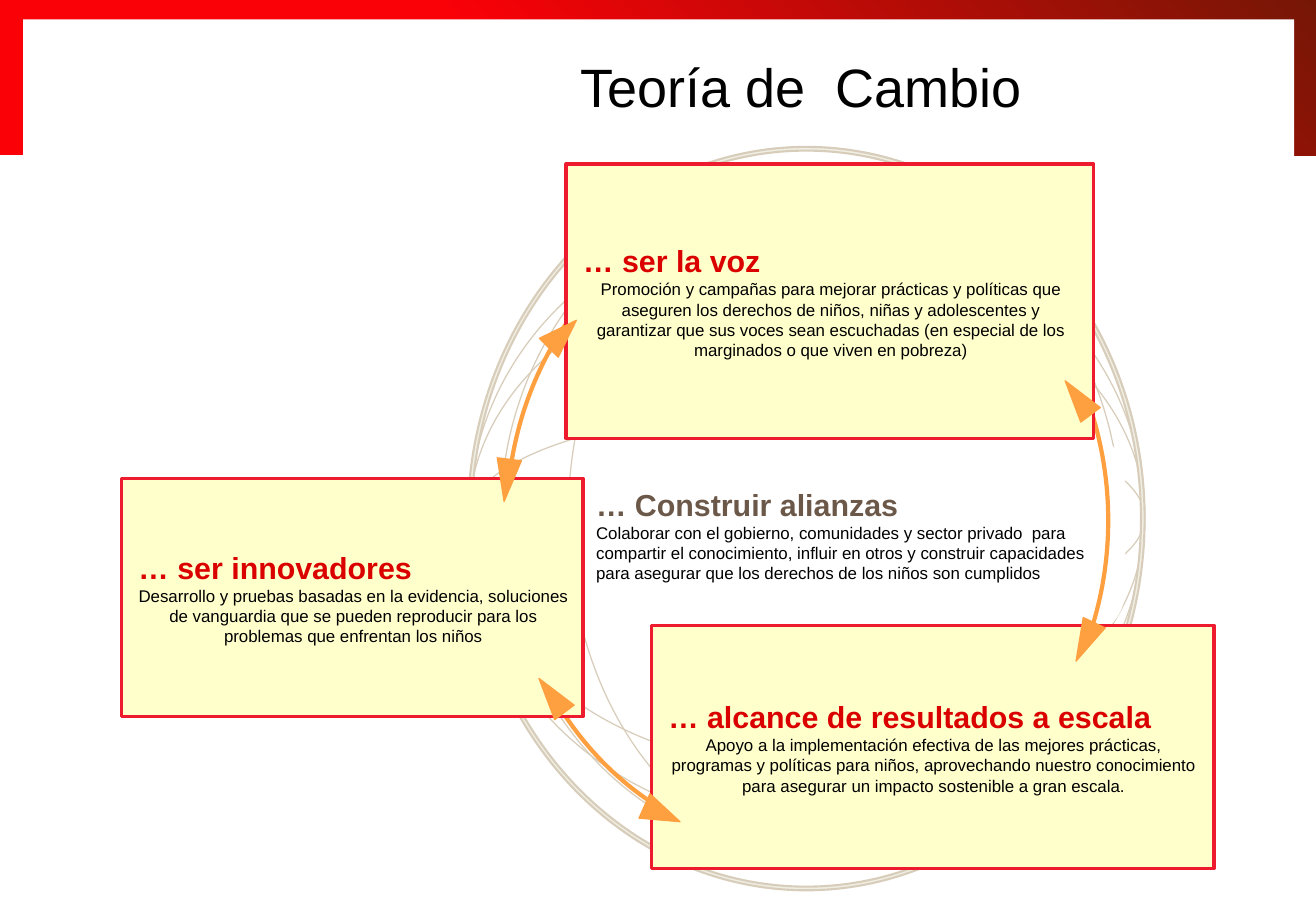
"""Build the theory of change slide with its linked boxes over a globe."""
from dataclasses import dataclass

from pptx import Presentation
from pptx.dml.color import RGBColor
from pptx.enum.shapes import MSO_SHAPE as Preset
from pptx.enum.text import MSO_ANCHOR as Anchor, PP_ALIGN as Align
from pptx.shapes.autoshape import Shape
from pptx.slide import Slide
from pptx.text.text import TextFrame
from pptx.util import Inches, Pt


@dataclass(frozen=True)
class Theme:
    font: str = "Arial"
    title_size: float = 32
    heading_size: float = 18
    body_size: float = 10
    black: str = "000000"
    white: str = "FFFFFF"
    band_start: str = "FA0007"
    band_end: str = "761706"
    globe: str = "D8CDBA"
    ring: str = "F0EFE4"
    orange: str = "FE9F40"
    card_fill: str = "FFFFCC"
    card_line: str = "EE1B2E"
    card_heading: str = "DA0000"
    center_heading: str = "6B5849"


@dataclass(frozen=True)
class Box:
    left: float
    top: float
    width: float
    height: float


@dataclass(frozen=True)
class Oval:
    center_x: float
    center_y: float
    width: float
    height: float

    def box(self) -> Box:
        return Box(self.center_x - self.width / 2, self.center_y - self.height / 2,
                   self.width, self.height)


@dataclass(frozen=True)
class Card:
    box: Box
    heading: str
    body: str


@dataclass(frozen=True)
class Arrowhead:
    box: Box
    rotation: float


THEME = Theme()
PAGE_WIDTH, PAGE_HEIGHT = 10.83, 7.5
GLOBE_WIDTH, GLOBE_HEIGHT = 5.56, 6.1
GLOBE_X, GLOBE_Y = 6.64, 4.26

GLOBE_OVALS = [
    *(Oval(GLOBE_X, GLOBE_Y, GLOBE_WIDTH, height) for height in (GLOBE_HEIGHT, 1.79, 4.15, 5.1)),
    Oval(6.75, GLOBE_Y, 1.79, GLOBE_WIDTH),
    Oval(6.75, GLOBE_Y, 4.15, GLOBE_WIDTH),
    Oval(6.67, GLOBE_Y, 5.1, GLOBE_WIDTH),
]

ALLIANCES = Card(
    Box(4.73, 3.54, 4.53, 1.72), "… Construir alianzas",
    "Colaborar con el gobierno, comunidades y sector privado  para compartir el conocimiento, "
    "influir en otros y construir capacidades para asegurar que los derechos de los niños son "
    "cumplidos")

CARDS = [
    Card(Box(4.66, 1.35, 4.34, 2.26), "… ser la voz",
         "Promoción y campañas para mejorar prácticas y políticas que aseguren los derechos de "
         "niños, niñas y adolescentes y garantizar que sus voces sean escuchadas (en especial de "
         "los marginados o que viven en pobreza)"),
    Card(Box(1, 3.94, 3.8, 1.96), "… ser innovadores",
         "Desarrollo y pruebas basadas en la evidencia, soluciones de vanguardia que se pueden "
         "reproducir para los problemas que enfrentan los niños"),
    Card(Box(5.36, 5.15, 4.63, 2), "… alcance de resultados a escala",
         "Apoyo a la implementación efectiva de las mejores prácticas, programas y políticas "
         "para niños, aprovechando nuestro conocimiento para asegurar un impacto sostenible a "
         "gran escala."),
]

ARROWHEADS = [
    Arrowhead(Box(8.83, 5.11, 0.2, 0.35), 205.3),
    Arrowhead(Box(4.52, 2.59, 0.22, 0.32), 45.1),
    Arrowhead(Box(4.44, 5.55, 0.2, 0.35), 323.2),
    Arrowhead(Box(4.07, 3.78, 0.2, 0.35), 187.1),
    Arrowhead(Box(8.77, 3.1, 0.2, 0.35), 323.3),
    Arrowhead(Box(5.34, 6.54, 0.22, 0.32), 114),
]


def color(value: str) -> RGBColor:
    return RGBColor.from_string(value)


def add_shape(page: Slide, preset: Preset, box: Box, fill: str | None = None,
              line: str | None = None, line_width: float = 0.75) -> Shape:
    shape = page.shapes.add_shape(preset, Inches(box.left), Inches(box.top),
                                  Inches(box.width), Inches(box.height))
    shape.shadow.inherit = False
    if fill:
        shape.fill.solid()
        shape.fill.fore_color.rgb = color(fill)
    else:
        shape.fill.background()
    if line:
        shape.line.color.rgb = color(line)
        shape.line.width = Pt(line_width)
    else:
        shape.line.fill.background()
    return shape


def add_text(frame: TextFrame, text: str, size: float, text_color: str, align: Align,
             bold: bool = False, first: bool = True) -> None:
    para = frame.paragraphs[0] if first else frame.add_paragraph()
    para.alignment = align
    span = para.add_run()
    span.text = text
    span.font.name = THEME.font
    span.font.size = Pt(size)
    span.font.bold = bold
    span.font.color.rgb = color(text_color)


def fill_card(shape: Shape, card: Card, heading_color: str, body_align: Align,
              left: float, vertical: float, right: float) -> None:
    frame = shape.text_frame
    frame.word_wrap = True
    frame.vertical_anchor = Anchor.MIDDLE
    frame.margin_left, frame.margin_right = Inches(left), Inches(right)
    frame.margin_top = frame.margin_bottom = Inches(vertical)
    add_text(frame, card.heading, THEME.heading_size, heading_color, Align.LEFT, bold=True)
    add_text(frame, card.body, THEME.body_size, THEME.black, body_align, first=False)


def add_band(page: Slide) -> None:
    band = add_shape(page, Preset.RECTANGLE, Box(0, 0, PAGE_WIDTH, 1.28))
    band.fill.gradient()
    band.fill.gradient_angle = 45
    stops = ((0.4, THEME.band_start), (1, THEME.band_end))
    for stop, (position, value) in zip(band.fill.gradient_stops, stops):
        stop.position = position
        stop.color.rgb = color(value)
    add_shape(page, Preset.RECTANGLE, Box(0.19, 0.16, 10.46, 1.18), THEME.white)


def add_globe(page: Slide) -> None:
    for oval in GLOBE_OVALS:
        add_shape(page, Preset.OVAL, oval.box(), line=THEME.globe)
    ring = add_shape(page, Preset.DONUT, Box(3.85, 1.21, 5.57, 6.12), THEME.ring,
                     THEME.globe, 1.25)
    ring.adjustments[0] = 0.03 / 5.57


def add_cards(page: Slide) -> None:
    center = add_shape(page, Preset.ROUNDED_RECTANGLE, ALLIANCES.box, THEME.white)
    center.adjustments[0] = 0.232
    fill_card(center, ALLIANCES, THEME.center_heading, Align.LEFT, 0.06, 0, 0.06)
    add_shape(page, Preset.OVAL, Box(4.17, 1.57, 4.95, 5.43), line=THEME.orange, line_width=2.5)
    for card in CARDS:
        shape = add_shape(page, Preset.RECTANGLE, card.box, THEME.card_fill, THEME.card_line, 2)
        fill_card(shape, card, THEME.card_heading, Align.CENTER, 0.14, 0.2, 0.13)
    for arrowhead in ARROWHEADS:
        shape = add_shape(page, Preset.ISOSCELES_TRIANGLE, arrowhead.box, THEME.orange,
                          THEME.orange)
        shape.rotation = arrowhead.rotation


def add_title(page: Slide) -> None:
    title = page.shapes.add_textbox(Inches(4.22), Inches(0.39), Inches(4.75), Inches(0.64))
    title.text_frame.word_wrap = True
    add_text(title.text_frame, "Teoría de  Cambio", THEME.title_size, THEME.black, Align.CENTER)


def main() -> None:
    deck = Presentation()
    deck.slide_width, deck.slide_height = Inches(PAGE_WIDTH), Inches(PAGE_HEIGHT)
    page = deck.slides.add_slide(deck.slide_layouts[6])
    add_band(page)
    add_globe(page)
    add_cards(page)
    add_title(page)
    deck.save("out.pptx")


if __name__ == "__main__":
    main()
